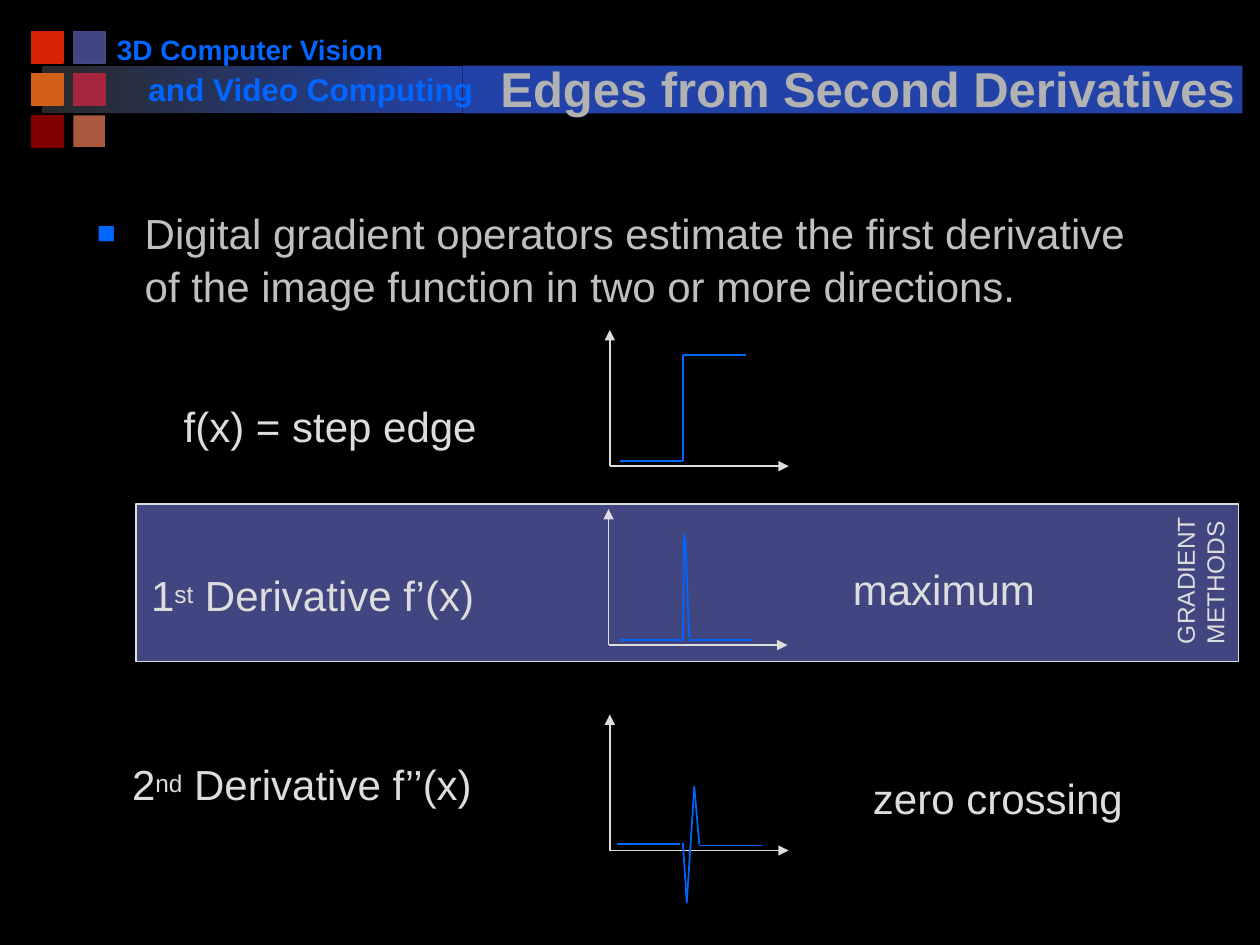
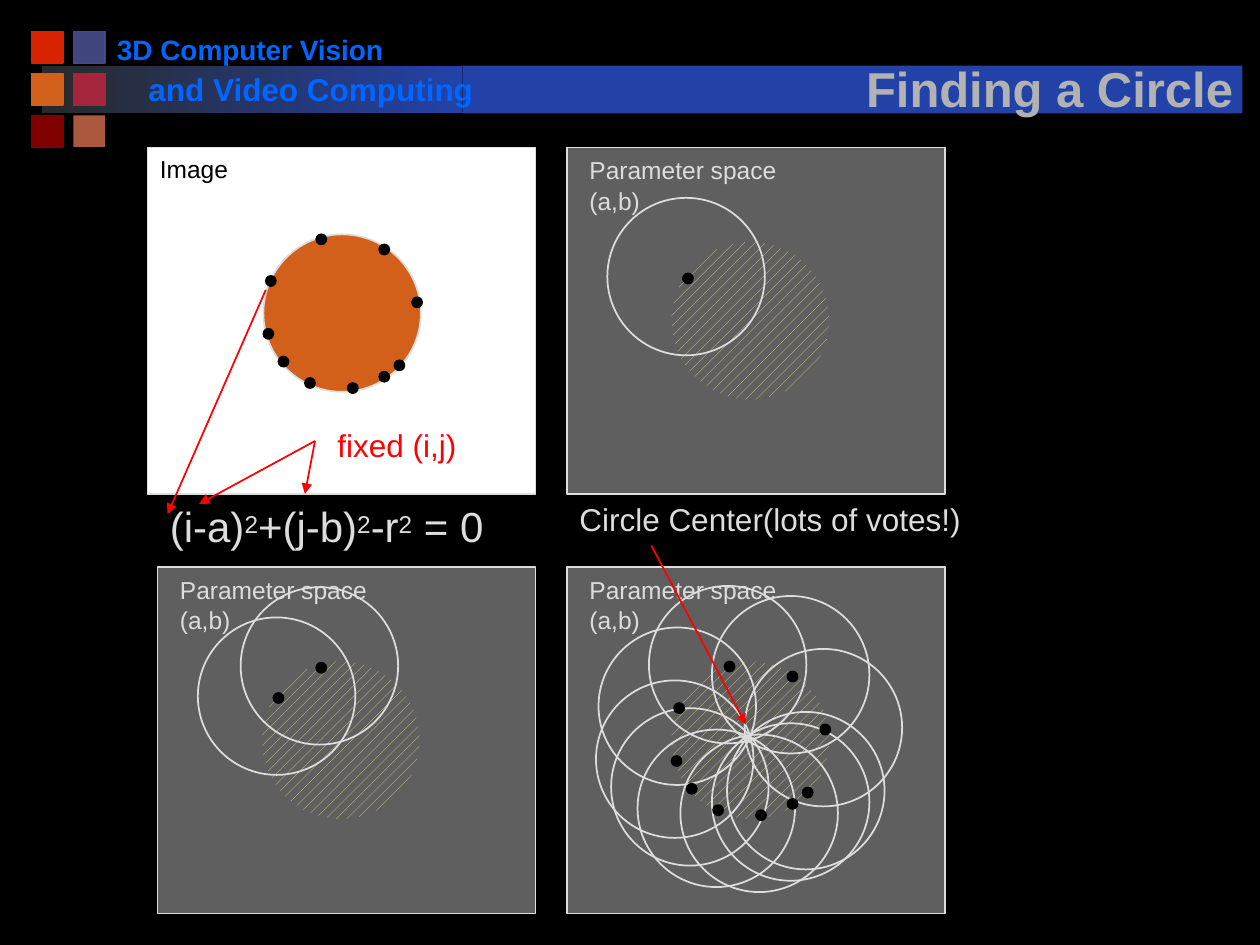
from lxml import etree
from pptx import Presentation
from pptx.dml.color import RGBColor
from pptx.enum import dml, shapes, text
from pptx.oxml import ns
from pptx.util import Inches, Pt

HUES = {
    "back": "000000", "pale": "DDDDDD", "title": "B2B2B2", "body": "C0C0C0",
    "blue": "0066FF", "band": "2242A8", "dusk": "292929", "slate": "424680",
    "edge": "454A85", "wine": "A5253D", "maroon": "800000", "red": "D82204",
    "orange": "D2601A", "clay": "AA583E", "white": "FFFFFF", "grey": "5F5F5F",
    "hatch": "EBE077", "mark": "FF0000",
}
SQUARES = [  # column, row, fill, line
    (1, 0, "slate", "edge"), (1, 1, "wine", "wine"), (0, 2, "maroon", "maroon"),
    (0, 0, "red", "red"), (0, 1, "orange", "orange"), (1, 2, "clay", None),
]
# Curves as segments measured from the origin of the axes
STEP = [(.08, -.04, .58, -.04), (.58, -.88, 1.08, -.88), (.58, -.88, .58, -.04)]
PEAK = [(.09, -.04, .59, -.04), (.64, -.04, 1.14, -.04),
        (.6, -.88, .59, -.04), (.61, -.84, .64, -.06)]
CROSS = [(.06, -.05, .56, -.05), (.71, -.04, 1.21, -.04), (.67, -.5, .61, .42),
         (.58, -.06, .61, .4), (.67, -.51, .71, -.05)]
# Edge points measured from the corner of the disc
RIM = [(.02, .33), (.42, 0), (.92, .08), (1.18, .5), (1.04, 1), (.92, 1.09),
       (.67, 1.18), (.33, 1.14), (0, .75), (.12, .97)]
FIRST, NEXT = (.09, .25), (.43, .01)
DISC, DOT = 1.25, .08
RECT, OVAL = shapes.MSO_SHAPE.RECTANGLE, shapes.MSO_SHAPE.OVAL


def rgb(hue):
    return RGBColor.from_string(HUES[hue])


def apply(item, style):
    for name, value in style.items():
        setattr(item, name, value)


def add_xml(node, tag, **attrs):
    return etree.SubElement(node, ns.qn(tag), attrs)


def put_shape(slide, kind, box, fill=None, line=None):
    shape = slide.shapes.add_shape(kind, *map(Inches, box))
    shape.shadow.inherit = False
    if fill:
        shape.fill.solid()
        shape.fill.fore_color.rgb = rgb(fill)
    else:
        shape.fill.background()
    if line:
        shape.line.color.rgb = rgb(line)
        shape.line.width = Pt(1)
    else:
        shape.line.fill.background()
    return shape


def put_line(slide, ends, hue, arrow=False):
    line = slide.shapes.add_connector(
        shapes.MSO_CONNECTOR.STRAIGHT, *map(Inches, ends))
    line.line.color.rgb = rgb(hue)
    line.line.width = Pt(1)
    if arrow:
        add_xml(line.line._get_or_add_ln(), "a:tailEnd", type="triangle")
    add_xml(line._element.spPr, "a:effectLst")


def put_text(slide, box, words, size, hue="pale", wrap=False, bold=False,
             anchor=text.MSO_ANCHOR.TOP, align=text.PP_ALIGN.LEFT, gap=None):
    """Write one paragraph a line; ^marks^ enclose superscripts."""
    label = slide.shapes.add_textbox(*map(Inches, box))
    frame = label.text_frame
    apply(frame, {"word_wrap": wrap, "vertical_anchor": anchor})
    for row, line in enumerate(words.split("\n")):
        para = frame.add_paragraph() if row else frame.paragraphs[0]
        apply(para, {"alignment": align, "line_spacing": gap})
        for index, part in enumerate(line.split("^")):
            run = para.add_run()
            run.text = part
            apply(run.font, {"size": Pt(size), "name": "Arial", "bold": bold})
            run.font.color.rgb = rgb(hue)
            if index % 2:
                run.font._element.set("baseline", "20000")
    return label


# Shared header: colour squares, band, course name, title
def draw_head(slide, title, left, width):
    slide.background.fill.solid()
    slide.background.fill.fore_color.rgb = rgb("back")
    fade = put_shape(slide, RECT, (.33, .52, 3.34, .38), "band").fill
    fade.gradient()
    fade.gradient_angle = 0
    for stop, hue in zip(fade.gradient_stops, ("dusk", "band")):
        stop.color.rgb = rgb(hue)
    for col, row, fill, line in SQUARES:
        box = (.25 + col * .333, .25 + row * .333, .25, .25)
        put_shape(slide, RECT, box, fill, line)
    put_shape(slide, RECT, (3.67, .52, 6.19, .38), "band")
    put_text(slide, (.83, .21, 2.32, .37), "3D Computer Vision", 16, "blue", bold=True)
    put_text(slide, (1.08, .51, 2.83, .4), "and Video Computing", 18, "blue", bold=True)
    label = put_text(slide, (left, .31, width, .67), title, 28, "title", bold=True,
                     anchor=text.MSO_ANCHOR.BOTTOM, align=text.PP_ALIGN.CENTER)
    props = label.text_frame.paragraphs[0].runs[0].font._element
    glow = etree.Element(ns.qn("a:effectLst"))
    cast = add_xml(glow, "a:outerShdw", dist="35921", dir="2700000", algn="ctr")
    add_xml(cast, "a:srgbClr", val=HUES["back"])
    props.find(ns.qn("a:solidFill")).addnext(glow)


# Bulleted statement
def draw_point(slide, box, words):
    label = put_text(slide, box, words, 24, "body", wrap=True, gap=1.05)
    props = label.text_frame.paragraphs[0]._p.get_or_add_pPr()
    props.set("marL", str(Inches(.38)))
    props.set("indent", str(-Inches(.38)))
    add_xml(add_xml(props, "a:buClr"), "a:srgbClr", val=HUES["blue"])
    add_xml(props, "a:buSzPct", val="75000")
    add_xml(props, "a:buFont", typeface="Arial")
    add_xml(props, "a:buChar", char="■")


# Axes with one curve
def draw_plot(slide, left, base, curve):
    for dx, dy in ((0, -1.08), (1.42, 0)):
        put_line(slide, (left, base, left + dx, base + dy), "pale", arrow=True)
    for x1, y1, x2, y2 in curve:
        put_line(slide, (left + x1, base + y1, left + x2, base + y2), "blue")


def draw_dots(slide, left, top, points):
    for dx, dy in points:
        put_shape(slide, OVAL, (left + dx, top + dy, DOT, DOT), "back", "back")


# Image panel with the disc and its edge points
def draw_image(slide, left, top):
    put_shape(slide, RECT, (left, top, 3.08, 2.75), "white", "pale")
    x, y = left + .92, top + .69
    put_shape(slide, OVAL, (x, y, DISC, DISC), "orange", "pale")
    draw_dots(slide, x, y, RIM)
    put_text(slide, (left, top, .74, .33), "Image", 14, "back")
    put_text(slide, (left + 1.41, top + 2.16, 1.15, .4), "fixed (i,j)", 18, "mark")
    for x1, y1, x2, y2 in ((1.33, 2.33, .41, 2.83), (1.33, 2.33, 1.25, 2.75),
                           (.94, 1.13, .16, 2.91)):
        ends = (left + x1, top + y1, left + x2, top + y2)
        put_line(slide, ends, "mark", arrow=True)


# Parameter panel: each edge point votes along a ring centred on it
def draw_space(slide, left, top, points):
    put_shape(slide, RECT, (left, top, 3, 2.75), "grey", "pale")
    put_text(slide, (left + .08, top, 1.8, .33), "Parameter space (a,b)", 14,
             wrap=True, gap=1.05)
    x, y = left + .83, top + .75
    fill = put_shape(slide, OVAL, (x, y, DISC, DISC)).fill
    fill.patterned()
    fill.pattern = dml.MSO_PATTERN.PERCENT_20
    fill.fore_color.rgb = rgb("hatch")
    fill.back_color.rgb = rgb("grey")
    for dx, dy in points:
        put_shape(slide, OVAL, (x + dx - .6, y + dy - .6, DISC, DISC), line="pale")
    draw_dots(slide, x, y, points)


def build_edges(slide):
    put_shape(slide, RECT, (1.08, 4, 8.75, 1.25), "slate", "pale")
    draw_head(slide, "Edges from Second Derivatives", 3.79, 6.19)
    draw_point(slide, (.67, 1.58, 8.58, .92),
               "Digital gradient operators estimate the first derivative "
               "of the image function in two or more directions.")
    for left, base, curve in ((4.84, 3.7, STEP), (4.83, 5.12, PEAK), (4.84, 6.75, CROSS)):
        draw_plot(slide, left, base, curve)
    for left, top, width, words in (
            (1.36, 3.13, 2.53, "f(x) = step edge"),
            (1.1, 4.47, 2.78, "1^st^ Derivative f’(x)"),
            (.95, 5.97, 2.93, "2^nd^ Derivative f’’(x)"),
            (6.67, 4.42, 1.65, "maximum"),
            (6.83, 6.08, 2.19, "zero crossing")):
        put_text(slide, (left, top, width, .5), words, 24)
    side = put_text(slide, (8.92, 4.32, 1.21, .57), "GRADIENT\nMETHODS", 14)
    side.rotation = 270


def build_circle(slide):
    draw_head(slide, "Finding a Circle", 6.74, 3.18)
    put_text(slide, (1.25, 3.92, 2.74, .5), "(i-a)^2^+(j-b)^2^-r^2^ = 0", 24)
    draw_image(slide, 1.17, 1.17)
    for left, top, points in ((4.5, 1.17, [FIRST]), (1.25, 4.5, [FIRST, NEXT]),
                              (4.5, 4.5, RIM)):
        draw_space(slide, left, top, points)
    put_text(slide, (4.5, 3.92, 3.33, .4), "Circle Center(lots of votes!)", 18, wrap=True)
    put_line(slide, (5.17, 4.33, 5.92, 5.75), "mark", arrow=True)


def main():
    deck = Presentation()
    apply(deck, {"slide_width": Inches(10), "slide_height": Inches(7.5)})
    for build in (build_edges, build_circle):
        build(deck.slides.add_slide(deck.slide_layouts[6]))
    deck.save("out.pptx")


if __name__ == "__main__":
    main()
